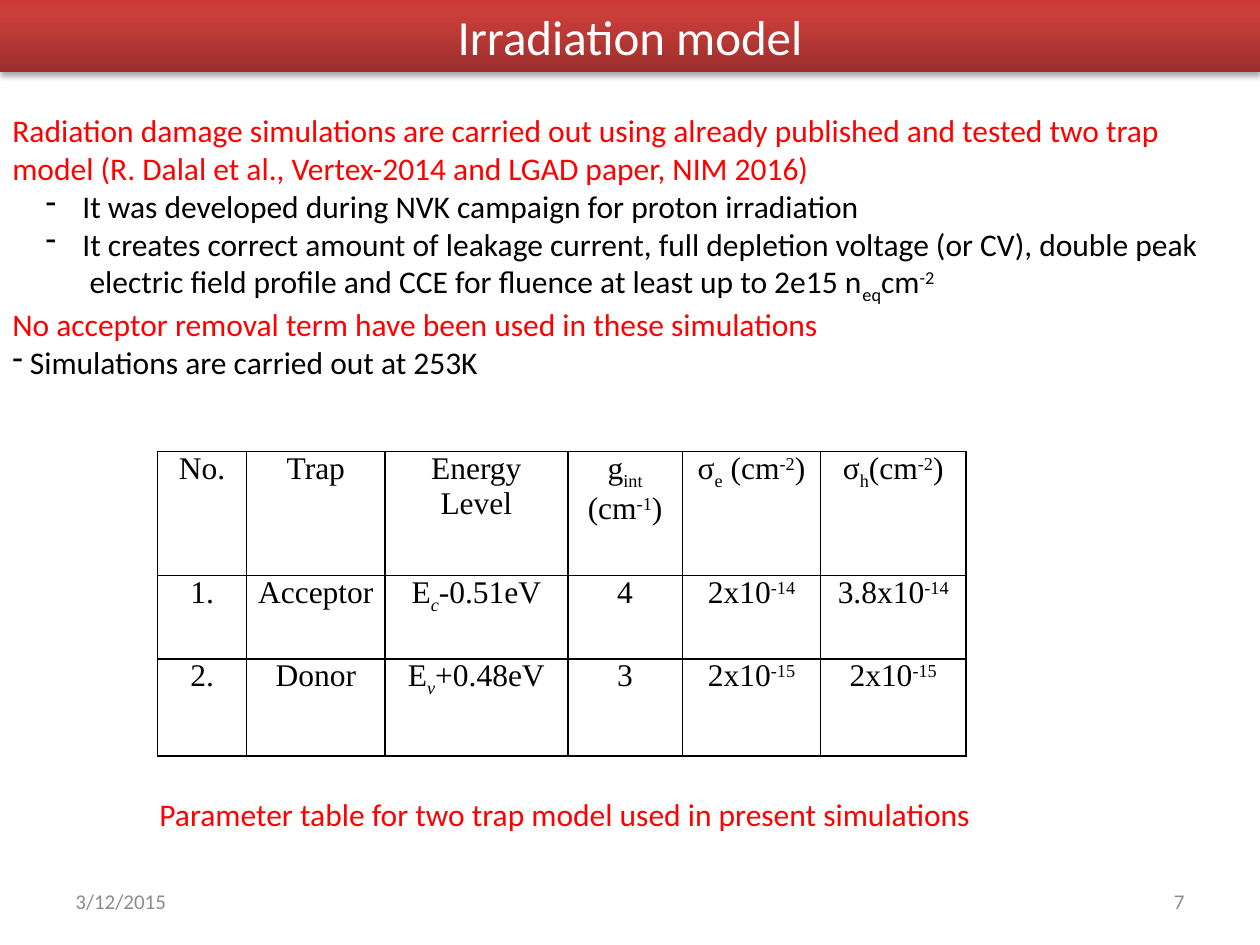
from copy import deepcopy

from pptx import Presentation
from pptx.dml.color import RGBColor
from pptx.enum.shapes import MSO_SHAPE
from pptx.enum.text import MSO_ANCHOR as Anchor, PP_ALIGN as Align
from pptx.oxml import parse_xml
from pptx.oxml.ns import nsdecls, qn
from pptx.oxml.xmlchemy import OxmlElement
from pptx.util import Pt

COLORS = {
    "white": "FFFFFF", "black": "000000", "red": "FF0000", "grey": "8C8C8C",
    "bar_dark": "9C2F2D", "bar_mid": "CB3E3A", "bar_light": "CE3B37",
}
BODY_FONT, TABLE_FONT = "Calibri", "Times New Roman"

# "|" parts runs; a leading "_" is subscript, "^" superscript, "/" italic subscript.
BASELINES = {"_": -25000, "^": 30000, "/": -25000}

# text, color, left margin, bullet indent (None for no bullet)
STATEMENTS = [
    ("Radiation damage simulations are carried out using already published and tested two trap",
     "red", 0, None),
    ("model (R. Dalal et al., Vertex-2014 and LGAD paper, NIM 2016)", "red", 0, None),
    (" It was developed during NVK campaign for proton irradiation", "black", 36, -17),
    (" It creates correct amount of leakage current, full depletion voltage (or CV), double peak",
     "black", 36, -17),
    ("  electric field profile and CCE for fluence at least up to 2e15 n|_eq|cm|^-2",
     "black", 36, None),
    ("No acceptor removal term have been used in these simulations", "red", 0, None),
    (" Simulations are carried out at 253K", "black", 0, 0),
]

COLUMN_WIDTHS = [51, 79, 104.5, 65.5, 79, 83]
ROW_HEIGHTS = [71, 47.5, 55.5]
TRAP_ROWS = [
    ["No.", "Trap", "Energy Level", "g|_int| (cm|^-1|)", "σ|_e| (cm|^-2|)", "σ|_h|(cm|^-2|)"],
    ["1.", "Acceptor", "E|/c|-0.51eV", "4", "2x10|^-14", "3.8x10|^-14"],
    ["2.", "Donor", "E|/v|+0.48eV", "3", "2x10|^-15", "2x10|^-15"],
]


def color(name):
    return RGBColor.from_string(COLORS[name])


def write(paragraph, marked_text, size, color_name, font=BODY_FONT, align=Align.LEFT):
    """Fill a paragraph with runs made from marked text."""
    paragraph.alignment = align
    for part in marked_text.split("|"):
        mark = part[0] if part[0] in BASELINES else ""
        run = paragraph.add_run()
        run.text = part[len(mark):]
        run.font.size = Pt(size)
        run.font.name = font
        run.font.color.rgb = color(color_name)
        if mark:
            run.font._element.set("baseline", str(BASELINES[mark]))
        if mark == "/":
            run.font.italic = True


def set_indent(paragraph, margin, indent):
    properties = paragraph._p.get_or_add_pPr()
    properties.set("marL", str(Pt(margin)))
    properties.set("indent", str(Pt(indent or 0)))
    if indent is not None:
        properties.append(OxmlElement("a:buFontTx"))
        bullet = OxmlElement("a:buChar")
        bullet.set("char", "-")
        properties.append(bullet)


def add_title_bar(slide, text):
    bar = slide.shapes.add_shape(MSO_SHAPE.RECTANGLE, 0, 0, Pt(720), Pt(41))
    bar.line.fill.background()
    bar.fill.gradient()
    bar.fill.gradient_angle = 90
    first_stop = bar._element.spPr.find(".//" + qn("a:gs"))
    first_stop.addnext(deepcopy(first_stop))
    stops = [(0, "bar_dark"), (0.8, "bar_mid"), (1, "bar_light")]
    for stop, (position, name) in zip(bar.fill.gradient_stops, stops):
        stop.position = position
        stop.color.rgb = color(name)
    bar._element.spPr.append(parse_xml(
        f'<a:effectLst {nsdecls("a")}><a:outerShdw blurRad="{Pt(3.1)}" dist="{Pt(1.8)}" '
        f'dir="5400000" rotWithShape="0"><a:srgbClr val="{COLORS["black"]}">'
        '<a:alpha val="35000"/></a:srgbClr></a:outerShdw></a:effectLst>'))
    bar.text_frame.vertical_anchor = Anchor.TOP
    write(bar.text_frame.paragraphs[0], text, 28, "white", align=Align.CENTER)


def add_text_frame(slide, left, top, width, height, wrap=True, anchor=Anchor.TOP):
    box = slide.shapes.add_textbox(Pt(left), Pt(top), Pt(width), Pt(height))
    box.text_frame.word_wrap = wrap
    box.text_frame.vertical_anchor = anchor
    return box.text_frame


def add_statements(slide):
    frame = add_text_frame(slide, 0, 60, 720, 160)
    for index, (text, color_name, margin, indent) in enumerate(STATEMENTS):
        paragraph = frame.add_paragraph() if index else frame.paragraphs[0]
        write(paragraph, text, 18, color_name)
        set_indent(paragraph, margin, indent)


def add_footer(slide, left, text, align):
    frame = add_text_frame(slide, left, 500.5, 168, 28.75, anchor=Anchor.MIDDLE)
    write(frame.paragraphs[0], text, 12, "grey", align=align)


def format_cell(cell):
    """Plain cell with thin black borders."""
    cell.margin_left = cell.margin_right = Pt(5)
    cell.margin_top = cell.margin_bottom = 0
    properties = cell._tc.get_or_add_tcPr()
    for side in ("lnL", "lnR", "lnT", "lnB"):
        properties.append(parse_xml(
            f'<a:{side} {nsdecls("a")} w="{Pt(1)}"><a:solidFill>'
            f'<a:srgbClr val="{COLORS["black"]}"/></a:solidFill></a:{side}>'))
    cell.fill.background()


def add_trap_table(slide):
    table = slide.shapes.add_table(
        len(ROW_HEIGHTS), len(COLUMN_WIDTHS), Pt(90), Pt(258),
        Pt(sum(COLUMN_WIDTHS)), Pt(sum(ROW_HEIGHTS))).table
    table.first_row = table.horz_banding = False
    for column, width in zip(table.columns, COLUMN_WIDTHS):
        column.width = Pt(width)
    for row, height, texts in zip(table.rows, ROW_HEIGHTS, TRAP_ROWS):
        row.height = Pt(height)
        for cell, text in zip(row.cells, texts):
            format_cell(cell)
            write(cell.text_frame.paragraphs[0], text, 18, "black", TABLE_FONT, Align.CENTER)


def main():
    presentation = Presentation()
    presentation.slide_width, presentation.slide_height = Pt(720), Pt(540)
    slide = presentation.slides.add_slide(presentation.slide_layouts[6])
    add_title_bar(slide, "Irradiation model")
    add_statements(slide)
    add_trap_table(slide)
    caption = add_text_frame(slide, 84, 450.75, 483, 29, wrap=False)
    write(caption.paragraphs[0],
          "Parameter table for two trap model used in present simulations", 18, "red")
    add_footer(slide, 36, "3/12/2015", Align.LEFT)
    add_footer(slide, 516, "7", Align.RIGHT)
    presentation.save("out.pptx")


if __name__ == "__main__":
    main()
